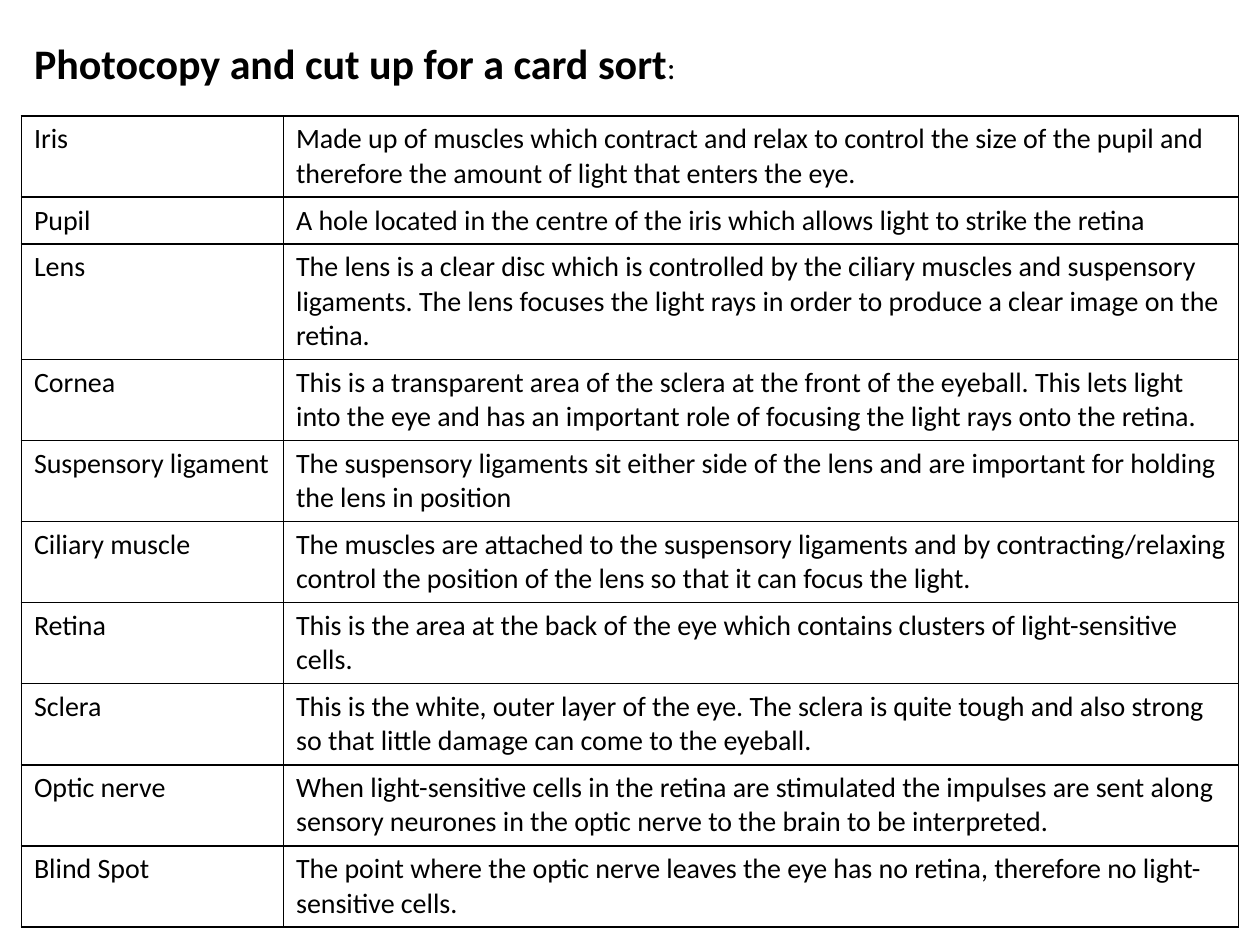
from lxml.etree import SubElement
from pptx import Presentation
from pptx.dml.color import RGBColor
from pptx.enum.text import MSO_ANCHOR, MSO_AUTO_SIZE, PP_ALIGN
from pptx.oxml.ns import qn
from pptx.util import Inches, Pt

BLACK = RGBColor(0, 0, 0)
WHITE = RGBColor(255, 255, 255)
FONT = "Calibri"
MARGIN = 0.17
COLUMNS = (2.08, 7.58)
LINE_HEIGHT = 0.265
CELL_PADDING = 0.1

CARDS = [
    ("Iris", "Made up of muscles which contract and relax to control the size of the pupil and "
     "therefore the amount of light that enters the eye.", 2),
    ("Pupil", "A hole located in the centre of the iris which allows light to strike the retina", 1),
    ("Lens", "The lens is a clear disc which is controlled by the ciliary muscles and suspensory "
     "ligaments. The lens focuses the light rays in order to produce a clear image on the retina.", 3),
    ("Cornea", "This is a transparent area of the sclera at the front of the eyeball. This lets light "
     "into the eye and has an important role of focusing the light rays onto the retina.", 2),
    ("Suspensory ligament", "The suspensory ligaments sit either side of the lens and are important "
     "for holding the lens in position", 2),
    ("Ciliary muscle", "The muscles are attached to the suspensory ligaments and by "
     "contracting/relaxing control the position of the lens so that it can focus the light.", 2),
    ("Retina", "This is the area at the back of the eye which contains clusters of light-sensitive "
     "cells.", 2),
    ("Sclera", "This is the white, outer layer of the eye. The sclera is quite tough and also strong "
     "so that little damage can come to the eyeball.", 2),
    ("Optic nerve", "When light-sensitive cells in the retina are stimulated the impulses are sent "
     "along sensory neurones in the optic nerve to the brain to be interpreted.", 2),
    ("Blind Spot", "The point where the optic nerve leaves the eye has no retina, therefore no "
     "light-sensitive cells.", 2),
]


def style_font(font, size, bold=False):
    """Apply the slide's typeface and colour at the given size."""
    font.name, font.size, font.bold = FONT, Pt(size), bold
    font.color.rgb = BLACK


def add_title(slide, left, top, width, height):
    """Place the heading with its lighter, smaller colon."""
    sp = slide.shapes.title
    sp.left, sp.top, sp.width, sp.height = map(Inches, (left, top, width, height))
    tf = sp.text_frame
    tf.word_wrap = True
    tf.auto_size = MSO_AUTO_SIZE.NONE
    tf.vertical_anchor = MSO_ANCHOR.TOP
    p = tf.paragraphs[0]
    p.alignment = PP_ALIGN.LEFT
    for text, size, bold in (("Photocopy and cut up for a card sort", 24, True), (":", 18, False)):
        r = p.add_run()
        r.text = text
        style_font(r.font, size, bold)


def add_borders(cell):
    """Draw a thin black line on each side of a cell."""
    tc_pr = cell._tc.get_or_add_tcPr()
    for side in ("a:lnL", "a:lnR", "a:lnT", "a:lnB"):
        line = SubElement(tc_pr, qn(side), w=str(Pt(1)))
        fill = SubElement(line, qn("a:solidFill"))
        SubElement(fill, qn("a:srgbClr"), val=str(BLACK))


def add_card_table(slide, left, top):
    """Place the term and definition cards in rows sized by line count."""
    heights = [CELL_PADDING + LINE_HEIGHT * lines for _, _, lines in CARDS]
    frame = slide.shapes.add_table(len(CARDS), len(COLUMNS), Inches(left), Inches(top),
                                   Inches(sum(COLUMNS)), Inches(sum(heights)))
    table = frame.table
    table.first_row = table.horz_banding = False
    for column, width in zip(table.columns, COLUMNS):
        column.width = Inches(width)
    for row, height, card in zip(table.rows, heights, CARDS):
        row.height = Inches(height)
        for cell, text in zip(row.cells, card):
            cell.text = text
            style_font(cell.text_frame.paragraphs[0].font, 16)
            add_borders(cell)
            cell.fill.solid()
            cell.fill.fore_color.rgb = WHITE


def main():
    """Build and save the card sort slide."""
    prs = Presentation()
    prs.slide_width, prs.slide_height = Inches(10), Inches(7.5)
    slide = prs.slides.add_slide(prs.slide_layouts[5])
    add_card_table(slide, MARGIN, 0.92)
    add_title(slide, MARGIN, 0.25, 5.92, 0.5)
    prs.save("out.pptx")


if __name__ == "__main__":
    main()
